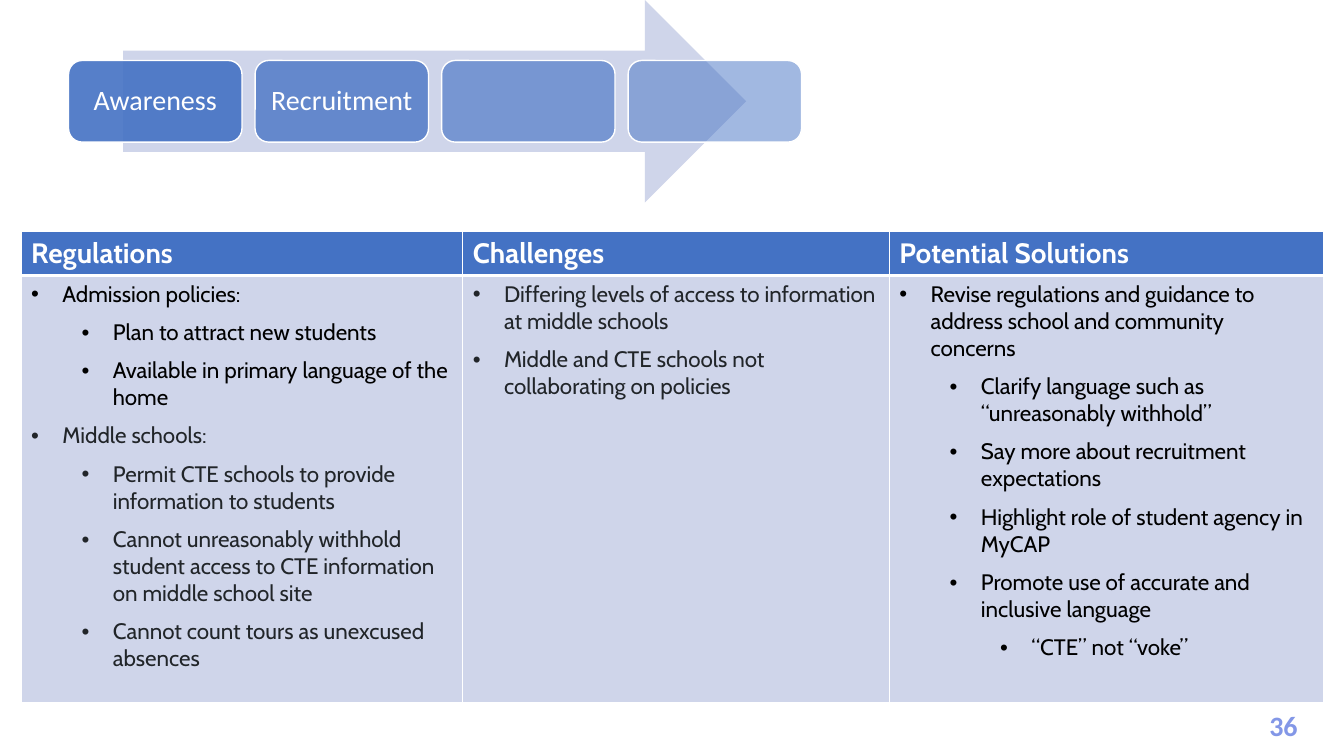
"""Build the recruitment slide: a process arrow above a table of regulations, challenges and solutions."""
import pptx
import pptx.dml.color
import pptx.enum.shapes
import pptx.enum.text
import pptx.oxml
import pptx.oxml.ns
import pptx.util

Inches = pptx.util.Inches
Pt = pptx.util.Pt
ALIGN = pptx.enum.text.PP_ALIGN
SHAPE = pptx.enum.shapes.MSO_SHAPE

STEPS = [("Awareness", 90), ("Recruitment", 77), ("", 63), ("", 50)]
PAGE_NUMBER = "36"
THEME = {
    "blue": "4472C4", "pale": "CFD5EA", "white": "FFFFFF", "black": "000000",
    "ink": "212529", "number": "8397E7",
    "table_font": "Cabin", "step_font": "Calibri",
    "large": 20, "body": 16,
}
COLUMNS = [
    ("Regulations", 4.38, [
        (0, "Admission policies:", "black"),
        (1, "Plan to attract new students", "black"),
        (1, "Available in primary language of the home", "black"),
        (0, "Middle schools:", "ink"),
        (1, "Permit CTE schools to provide information to students", "ink"),
        (1, "Cannot unreasonably withhold student access to CTE information on middle school site", "ink"),
        (1, "Cannot count tours as unexcused absences", "ink"),
    ]),
    ("Challenges", 4.23, [
        (0, "Differing levels of access to information at middle schools", "ink"),
        (0, "Middle and CTE schools not collaborating on policies", "ink"),
    ]),
    ("Potential Solutions", 4.31, [
        (0, "Revise regulations and guidance to address school and community concerns", "black"),
        (1, "Clarify language such as “unreasonably withhold”", "black"),
        (1, "Say more about recruitment expectations", "black"),
        (1, "Highlight role of student agency in MyCAP", "black"),
        (1, "Promote use of accurate and inclusive language", "black"),
        (2, "“CTE” not “voke”", "black"),
    ]),
]
ARROW = (1.22, 0, 6.18, 2.01)
STEP_LEFT, STEP_TOP, STEP_WIDTH, STEP_HEIGHT, STEP_PITCH = 0.68, 0.6, 1.72, 0.81, 1.85
TABLE_LEFT, TABLE_TOP = 0.21, 2.3
ROW_HEIGHTS = (0.43, 4.24)
BULLET_INDENT, LEVEL_INDENT = 0.31, 0.5


def color(name):
    return pptx.dml.color.RGBColor.from_string(THEME[name])


def add_xml(parent, tag, **attributes):
    child = pptx.oxml.parse_xml(f"<a:{tag} {pptx.oxml.ns.nsdecls('a')}/>")
    for key, value in attributes.items():
        child.set(key, str(value))
    parent.append(child)
    return child


def write(paragraph, text, font="table_font", size="large", ink="white", bold=False,
          align=ALIGN.LEFT, level=None):
    run = paragraph.add_run()
    run.text = text
    run.font.name = THEME[font]
    run.font.size = Pt(THEME[size])
    run.font.bold = bold
    run.font.color.rgb = color(ink)
    paragraph.alignment = align
    if level is not None:
        paragraph.level = level
        paragraph.space_before = paragraph.space_after = Pt(4)
        properties = paragraph._p.get_or_add_pPr()
        properties.set("marL", str(Inches(BULLET_INDENT + LEVEL_INDENT * level)))
        properties.set("indent", str(-Inches(BULLET_INDENT)))
        add_xml(properties, "buFont", typeface="Arial")
        add_xml(properties, "buChar", char="•")


def add_filled(slide, kind, box, fill, opacity=100):
    shape = slide.shapes.add_shape(kind, *map(Inches, box))
    shape.shadow.inherit = False
    shape.fill.solid()
    shape.fill.fore_color.rgb = color(fill)
    if opacity < 100:
        tint = shape._element.spPr.find(".//" + pptx.oxml.ns.qn("a:srgbClr"))
        add_xml(tint, "alpha", val=opacity * 1000)
    return shape


def add_process(slide):
    add_filled(slide, SHAPE.RIGHT_ARROW, ARROW, "pale").line.fill.background()
    for index, (label, opacity) in enumerate(STEPS):
        box = (STEP_LEFT + index * STEP_PITCH, STEP_TOP, STEP_WIDTH, STEP_HEIGHT)
        step = add_filled(slide, SHAPE.ROUNDED_RECTANGLE, box, "blue", opacity)
        step.line.color.rgb = color("white")
        step.line.width = Pt(1)
        if label:
            frame = step.text_frame
            frame.word_wrap = True
            frame.vertical_anchor = pptx.enum.text.MSO_ANCHOR.MIDDLE
            frame.margin_left = frame.margin_right = Inches(0.08)
            frame.paragraphs[0].line_spacing = 0.9
            write(frame.paragraphs[0], label, font="step_font", align=ALIGN.CENTER)


def style_cell(cell, fill, bottom_width):
    properties = cell._tc.get_or_add_tcPr()
    for side, width in (("lnL", 1), ("lnR", 1), ("lnT", 1), ("lnB", bottom_width)):
        border = add_xml(properties, side, w=Pt(width))
        add_xml(add_xml(border, "solidFill"), "srgbClr", val=THEME["white"])
    cell.fill.solid()
    cell.fill.fore_color.rgb = color(fill)


def add_policy_table(slide):
    total_width = sum(width for _, width, _ in COLUMNS)
    table = slide.shapes.add_table(
        len(ROW_HEIGHTS), len(COLUMNS), Inches(TABLE_LEFT), Inches(TABLE_TOP),
        Inches(total_width), Inches(sum(ROW_HEIGHTS))).table
    table.horz_banding = False
    for row, height in zip(table.rows, ROW_HEIGHTS):
        row.height = Inches(height)
    for index, (heading, width, points) in enumerate(COLUMNS):
        table.columns[index].width = Inches(width)
        header, body = table.cell(0, index), table.cell(1, index)
        style_cell(header, "blue", 3)
        style_cell(body, "pale", 1)
        write(header.text_frame.paragraphs[0], heading, bold=True)
        for order, (level, text, ink) in enumerate(points):
            frame = body.text_frame
            paragraph = frame.add_paragraph() if order else frame.paragraphs[0]
            write(paragraph, text, size="body", ink=ink, level=level)


def add_page_number(slide):
    number = slide.shapes.add_textbox(*map(Inches, (12.42, 6.98, 0.62, 0.44)))
    number.text_frame.word_wrap = True
    write(number.text_frame.paragraphs[0], PAGE_NUMBER, font="step_font", ink="number",
          bold=True, align=ALIGN.CENTER)


def main():
    deck = pptx.Presentation()
    deck.slide_width, deck.slide_height = Inches(13.33), Inches(7.5)
    slide = deck.slides.add_slide(deck.slide_layouts[6])
    add_page_number(slide)
    add_process(slide)
    add_policy_table(slide)
    deck.save("out.pptx")


if __name__ == "__main__":
    main()
